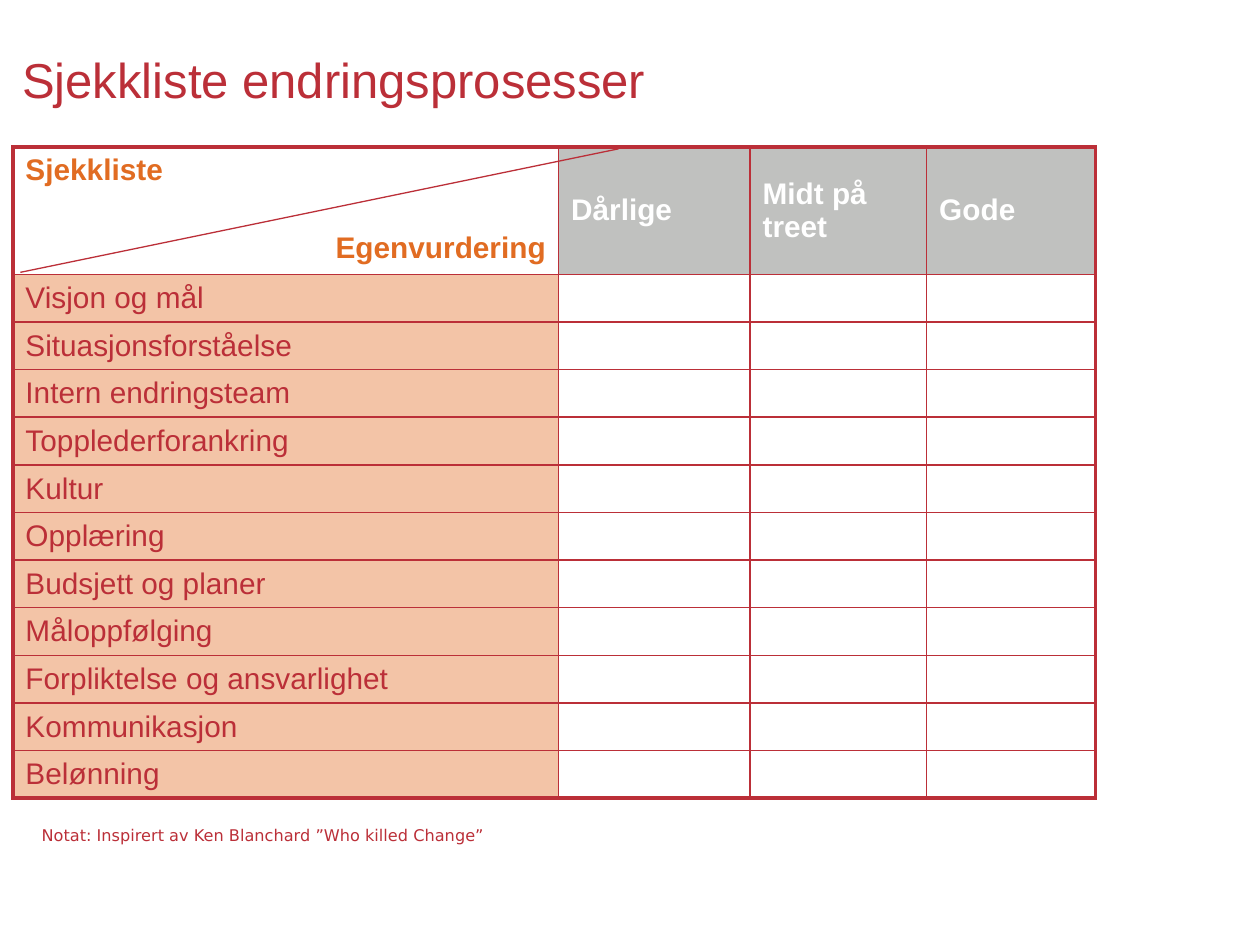
from dataclasses import dataclass

from lxml import etree
from pptx import Presentation
from pptx import util as u
from pptx.dml.color import RGBColor
from pptx.enum import shapes, text
from pptx.oxml import ns


@dataclass(frozen=True)
class Theme:
    red: str = "BB2F38"
    orange: str = "E16C22"
    peach: str = "F3C4A7"
    grey: str = "C0C1BF"
    white: str = "FFFFFF"
    font: str = "Arial"
    serif: str = "DejaVu Sans"
    title: float = 28
    body: float = 17
    note: float = 9.2
    frame: float = 2.25
    grid: float = 1
    thin: float = 0.75


class Deck:
    def __init__(self, theme, slide):
        self.theme = theme
        self.slide = slide

    def style(self, para, size, color, bold=False, font=None):
        face = para.font
        face.size = u.Pt(size)
        face.name = font or self.theme.font
        face.bold = bold
        face.color.rgb = RGBColor.from_string(color)

    def label(self, words, box, size, font=None, inset=0.25, anchor=text.MSO_ANCHOR.TOP):
        frame = self.slide.shapes.add_textbox(*map(u.Cm, box)).text_frame
        frame.word_wrap = True
        frame.vertical_anchor = anchor
        frame.margin_left = frame.margin_right = u.Cm(inset)
        para = frame.paragraphs[0]
        para.text = words
        self.style(para, size, self.theme.red, font=font)

    def line(self, start, end):
        rule = self.slide.shapes.add_connector(
            shapes.MSO_CONNECTOR.STRAIGHT, *map(u.Cm, start + end))
        rule.line.color.rgb = RGBColor.from_string(self.theme.red)
        rule.line.width = u.Pt(self.theme.thin)
        etree.SubElement(rule._element.spPr, ns.qn("a:effectLst"))

    def edge(self, cell, side, width):
        props = cell._tc.get_or_add_tcPr()
        edge = etree.SubElement(props, ns.qn("a:ln" + side), w=str(u.Pt(width)))
        fill = etree.SubElement(edge, ns.qn("a:solidFill"))
        etree.SubElement(fill, ns.qn("a:srgbClr"), val=self.theme.red)

    def cell(self, cell, words, fill, color, bold, outer):
        for side in "LRTB":
            self.edge(cell, side, self.theme.frame if side in outer else self.theme.grid)
        cell.fill.solid()
        cell.fill.fore_color.rgb = RGBColor.from_string(fill)
        cell.vertical_anchor = text.MSO_ANCHOR.MIDDLE
        cell.margin_top = cell.margin_bottom = 0
        cell.text = words
        for para in cell.text_frame.paragraphs:
            self.style(para, self.theme.body, color, bold)

    def table(self, place, cols, rows, heads, items):
        theme = self.theme
        size = (sum(cols), sum(rows))
        grid = self.slide.shapes.add_table(
            len(rows), len(cols), *map(u.Cm, place + size)).table
        grid.first_row = grid.horz_banding = False
        for col, width in zip(grid.columns, cols):
            col.width = u.Cm(width)
        for row, height in zip(grid.rows, rows):
            row.height = u.Cm(height)
        lines = [heads] + [[item] + [""] * (len(cols) - 1) for item in items]
        for r, line in enumerate(lines):
            for c, words in enumerate(line):
                outer = {"L" * (c == 0), "R" * (c == len(cols) - 1),
                         "T" * (r == 0), "B" * (r == len(rows) - 1)}
                if r == 0:
                    fill, color = (theme.grey, theme.white) if c else (theme.white, theme.orange)
                else:
                    fill, color = theme.white if c else theme.peach, theme.red
                self.cell(grid.cell(r, c), words, fill, color, r == 0, outer)
        corner = grid.cell(0, 0)
        corner.vertical_anchor = text.MSO_ANCHOR.TOP
        corner.margin_top = u.Cm(0.13)
        last = corner.text_frame.paragraphs[1]
        last.alignment = text.PP_ALIGN.RIGHT
        last.space_before = u.Pt(25.5)


def main():
    show = Presentation()
    show.slide_width, show.slide_height = u.Cm(25.4), u.Cm(19.05)
    theme = Theme()
    deck = Deck(theme, show.slides.add_slide(show.slide_layouts[6]))
    heads = ["Sjekkliste\nEgenvurdering", "Dårlige", "Midt på treet", "Gode"]
    items = ["Visjon og mål", "Situasjonsforståelse", "Intern endringsteam",
             "Topplederforankring", "Kultur", "Opplæring", "Budsjett og planer",
             "Måloppfølging", "Forpliktelse og ansvarlighet", "Kommunikasjon",
             "Belønning"]
    deck.label("Sjekkliste endringsprosesser", (0.2, 0, 22.86, 3.18), theme.title,
               anchor=text.MSO_ANCHOR.MIDDLE)
    deck.table((0.26, 2.96), (11, 3.86, 3.56, 3.4),
               (2.57,) + (0.96,) * len(items), heads, items)
    deck.line((0.41, 5.49), (12.47, 3))
    deck.label("Notat: Inspirert av Ken Blanchard ”Who killed Change”",
               (0.74, 16.51, 14.43, 0.51), theme.note, theme.serif, inset=0.1)
    show.save("out.pptx")


if __name__ == "__main__":
    main()
